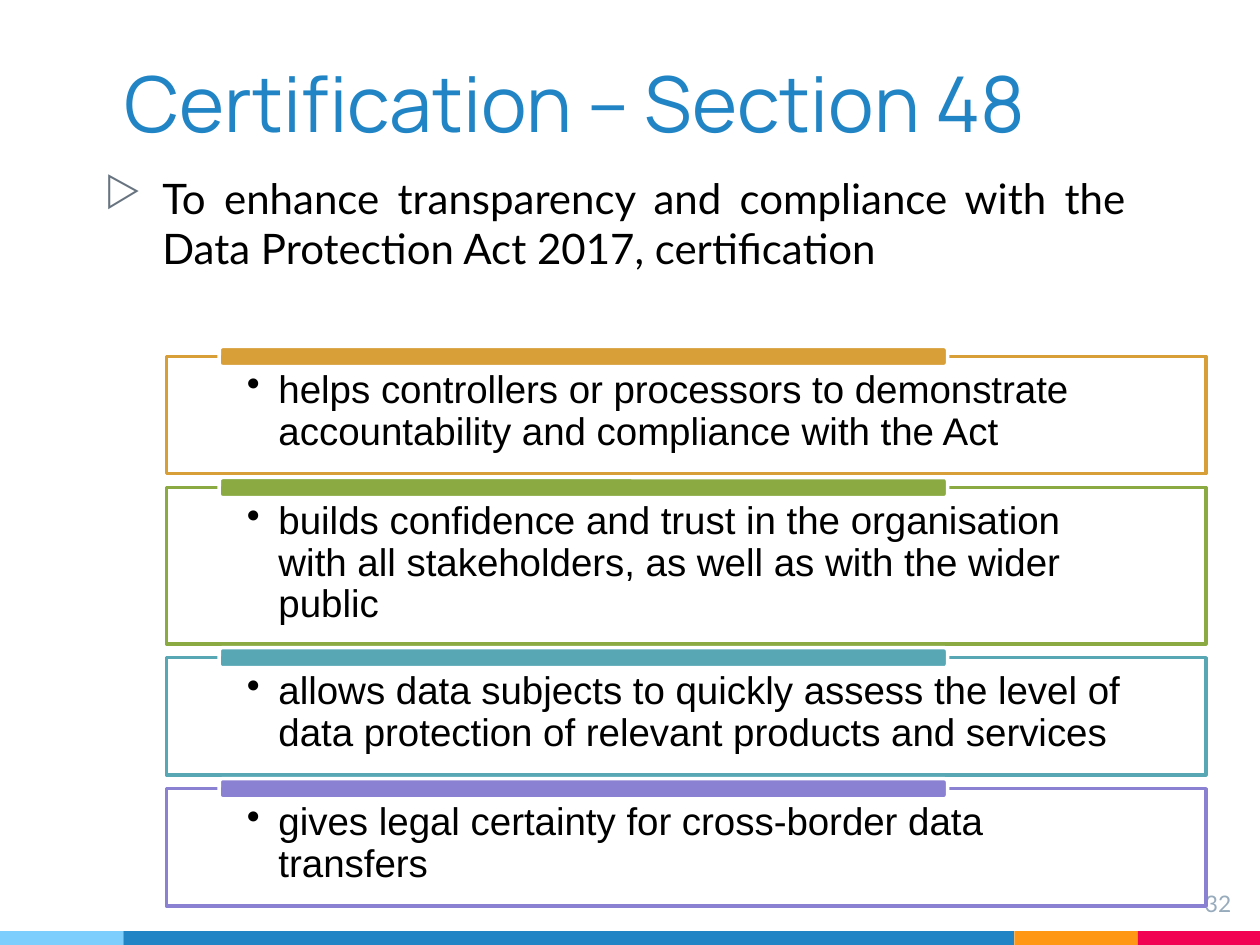
from lxml.etree import SubElement
from pptx import Presentation
from pptx.dml.color import RGBColor
from pptx.enum.shapes import MSO_SHAPE as SHAPE
from pptx.enum.text import MSO_ANCHOR as ANCHOR, PP_ALIGN as ALIGN
from pptx.oxml.ns import qn
from pptx.util import Inches, Pt


def rgb(value):
    return RGBColor.from_string(value)


def write(sp, text, size, font="Lato", color="000000", align=ALIGN.LEFT,
          anchor=ANCHOR.TOP, insets=(0.1, 0.1, 0.1, 0.1), margin=0, indent=0,
          bullet=None, bullet_color="000000", before=0, spacing=1.0):
    tf = sp.text_frame
    tf.word_wrap = True
    tf.vertical_anchor = anchor
    tf.margin_left, tf.margin_top, tf.margin_right, tf.margin_bottom = map(Inches, insets)
    p = tf.paragraphs[0]
    p.alignment = align
    p.space_before = Pt(before)
    p.line_spacing = spacing
    p_pr = p._p.get_or_add_pPr()
    p_pr.set("marL", str(Inches(margin)))
    p_pr.set("indent", str(Inches(indent)))
    if bullet:
        bu_clr = SubElement(p_pr, qn("a:buClr"))
        SubElement(bu_clr, qn("a:srgbClr"), val=bullet_color)
        SubElement(p_pr, qn("a:buChar"), char=bullet)
    r = p.add_run()
    r.text = text
    r.font.size = Pt(size)
    r.font.name = font
    r.font.color.rgb = rgb(color)


class Deck:
    title_color = "2185C5"
    box_left, box_width = 1.32, 8.25
    tab_left, tab_width, tab_height, tab_rise = 1.74, 5.78, 0.16, 0.08

    def __init__(self):
        self.prs = Presentation()
        self.prs.slide_width, self.prs.slide_height = Inches(10), Inches(7.5)
        self.s = self.prs.slides.add_slide(self.prs.slide_layouts[6])

    def shape(self, kind, left, top, width, height, fill, line=None, opacity=None):
        sp = self.s.shapes.add_shape(kind, *map(Inches, (left, top, width, height)))
        sp.shadow.inherit = False
        sp.fill.solid()
        sp.fill.fore_color.rgb = rgb(fill)
        if opacity:
            clr = sp.fill._xPr.find(qn("a:solidFill"))[0]
            SubElement(clr, qn("a:alpha"), val=str(opacity * 1000))
        if line:
            sp.line.color.rgb = rgb(line)
            sp.line.width = Pt(2)
        else:
            sp.line.fill.background()
        return sp

    def text(self, left, top, width, height, text, size, **fmt):
        sp = self.s.shapes.add_textbox(*map(Inches, (left, top, width, height)))
        write(sp, text, size, **fmt)

    def footer(self, bands):
        left = 0
        for width, color in bands:
            self.shape(SHAPE.RECTANGLE, left, 7.39, width, 0.11, color)
            left += width

    def benefit(self, top, height, text, color):
        sp = self.shape(SHAPE.RECTANGLE, self.box_left, top, self.box_width, height,
                        "FFFFFF", color, opacity=90)
        write(sp, text, 22, font="Arial", insets=(0.64, 0.11, 0.64, 0.17),
              margin=0.25, indent=-0.25, bullet="•", spacing=0.9)
        self.shape(SHAPE.ROUNDED_RECTANGLE, self.tab_left, top - self.tab_rise,
                   self.tab_width, self.tab_height, color, "FFFFFF")


def main():
    deck = Deck()
    deck.footer([(0.98, "7ECEFD"), (7.07, "2185C5"), (0.98, "FF9715"), (0.97, "F20253")])
    deck.text(0.85, 0.27, 7.69, 1, "Certification – Section 48", 44, font="Manrope",
              color=deck.title_color, align=ALIGN.JUSTIFY, anchor=ANCHOR.BOTTOM, margin=0.04)
    deck.text(0.69, 1.27, 8.34, 1.2,
              "To enhance transparency and compliance with the Data Protection Act 2017, "
              "certification", 24, align=ALIGN.JUSTIFY, margin=0.5, indent=-0.46,
              bullet="▷", bullet_color="677480", before=6)
    deck.text(9.27, 6.96, 0.6, 0.46, "32", 13, color="97ABBC", align=ALIGN.RIGHT)

    benefits = [
        (0.93, "D89F39", "helps controllers or processors to demonstrate accountability "
                         "and compliance with the Act"),
        (1.24, "8BAB42", "builds confidence and trust in the organisation with all "
                         "stakeholders, as well as with the wider public"),
        (0.93, "57A7B5", "allows data subjects to quickly assess the level of data "
                         "protection of relevant products and services"),
        (0.93, "8B81D2", "gives legal certainty for cross-border data transfers"),
    ]
    top, gap = 2.83, 0.11
    for height, color, text in benefits:
        deck.benefit(top, height, text, color)
        top += height + gap
    deck.prs.save("out.pptx")


if __name__ == "__main__":
    main()
